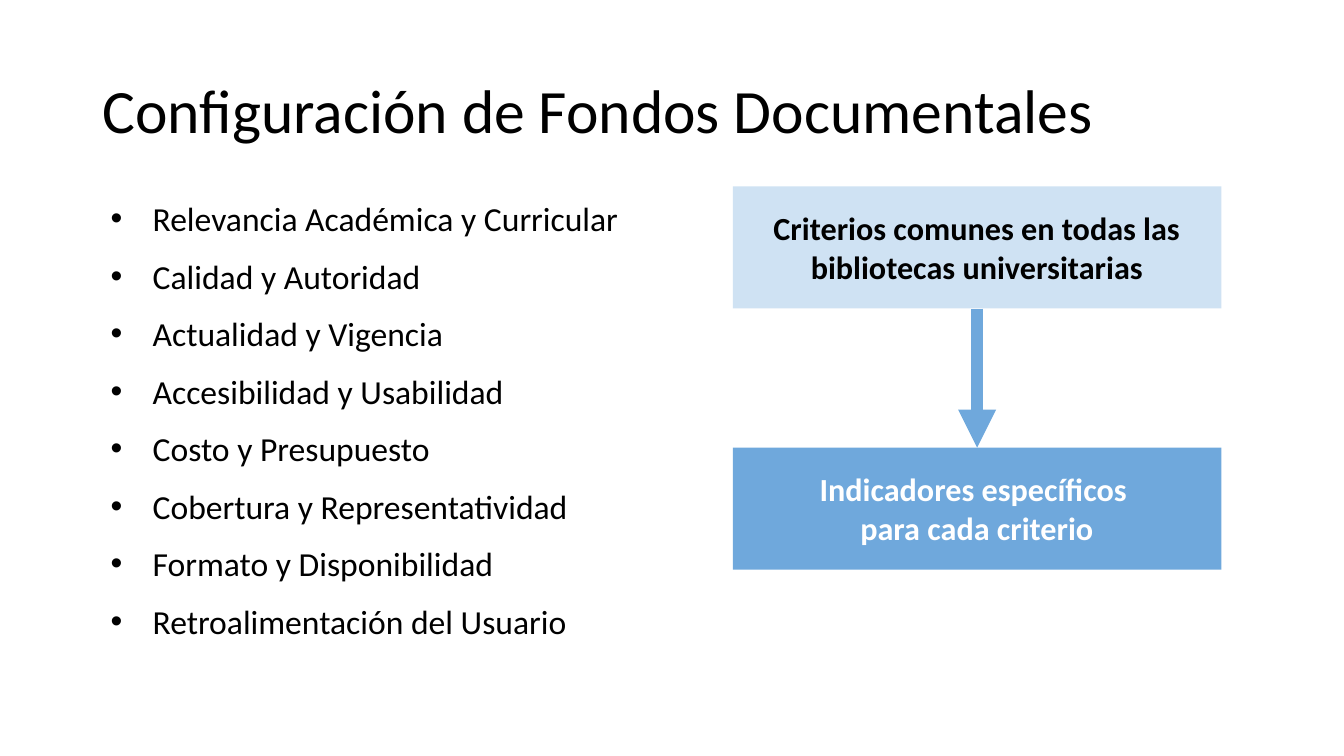
from lxml import etree
from pptx import Presentation
from pptx.dml.color import RGBColor
from pptx.enum.shapes import MSO_CONNECTOR, MSO_SHAPE
from pptx.enum.text import MSO_ANCHOR, MSO_AUTO_SIZE, PP_ALIGN
from pptx.oxml.ns import qn
from pptx.util import Pt

RECTANGLE = MSO_SHAPE.RECTANGLE
STRAIGHT = MSO_CONNECTOR.STRAIGHT
TOP, MIDDLE = MSO_ANCHOR.TOP, MSO_ANCHOR.MIDDLE
CENTER = PP_ALIGN.CENTER
GROW = MSO_AUTO_SIZE.SHAPE_TO_FIT_TEXT
BOTTOM_SIDE, TOP_SIDE = 2, 0

COLORS = {"black": "000000", "white": "FFFFFF", "pale": "CFE2F3", "blue": "6FA8DC"}
CRITERIA = [
    "Relevancia Académica y Curricular",
    "Calidad y Autoridad",
    "Actualidad y Vigencia",
    "Accesibilidad y Usabilidad",
    "Costo y Presupuesto",
    "Cobertura y Representatividad",
    "Formato y Disponibilidad",
    "Retroalimentación del Usuario",
]


class SlideBuilder:
    font_name = "Calibri"

    def __init__(self, page):
        self.page = page

    def color(self, name):
        return RGBColor.from_string(COLORS[name])

    def format_runs(self, para, size, color, bold=False):
        for span in para.runs:
            span.font.name = self.font_name
            span.font.size = Pt(size)
            span.font.bold = bold
            span.font.color.rgb = self.color(color)

    def text_box(self, left, top, width, height, anchor):
        box = self.page.shapes.add_textbox(Pt(left), Pt(top), Pt(width), Pt(height))
        frame = box.text_frame
        frame.word_wrap = True
        frame.vertical_anchor = anchor
        return frame

    def title(self, text, left, top, width, height):
        frame = self.text_box(left, top, width, height, MIDDLE)
        frame.text = text
        para = frame.paragraphs[0]
        para.line_spacing = 0.9
        self.format_runs(para, 44, "black")

    def bullets(self, items, left, top, width, height):
        frame = self.text_box(left, top, width, height, TOP)
        frame.text = "\n".join(items)
        for index, para in enumerate(frame.paragraphs):
            para.line_spacing = 0.8
            para.space_before = Pt(18 if index else 0)
            properties = para._p.get_or_add_pPr()
            properties.set("marL", str(Pt(36)))
            properties.set("indent", str(Pt(-30)))
            bullet_color = etree.SubElement(properties, qn("a:buClr"))
            etree.SubElement(bullet_color, qn("a:srgbClr"), val=COLORS["black"])
            etree.SubElement(properties, qn("a:buFont"), typeface="Arial")
            etree.SubElement(properties, qn("a:buChar"), char="•")
            self.format_runs(para, 24, "black")

    def panel(self, text, left, top, width, height, fill, color):
        box = self.page.shapes.add_shape(RECTANGLE, Pt(left), Pt(top), Pt(width), Pt(height))
        box.shadow.inherit = False
        box.fill.solid()
        box.fill.fore_color.rgb = self.color(fill)
        box.line.fill.background()
        frame = box.text_frame
        frame.word_wrap = True
        frame.auto_size = GROW
        frame.vertical_anchor = TOP
        frame.margin_left = frame.margin_right = Pt(15.84)
        frame.margin_top = frame.margin_bottom = Pt(15.84)
        frame.text = text
        para = frame.paragraphs[0]
        para.alignment = CENTER
        self.format_runs(para, 23, color, bold=True)
        return box

    def arrow(self, upper, lower, color, width):
        link = self.page.shapes.add_connector(STRAIGHT, 0, 0, 0, 0)
        link.begin_connect(upper, BOTTOM_SIDE)
        link.end_connect(lower, TOP_SIDE)
        link.line.color.rgb = self.color(color)
        link.line.width = Pt(width)
        etree.SubElement(link.line._get_or_add_ln(), qn("a:tailEnd"), type="triangle")
        etree.SubElement(link._element.spPr, qn("a:effectLst"))


def main():
    deck = Presentation()
    deck.slide_width, deck.slide_height = Pt(960), Pt(540)
    builder = SlideBuilder(deck.slides.add_slide(deck.slide_layouts[6]))
    builder.title("Configuración de Fondos Documentales", 66, 28.75, 828, 104.4)
    builder.bullets(CRITERIA, 66, 143.75, 828, 342.6)
    common = builder.panel(
        "Criterios comunes en todas las bibliotecas universitarias",
        523.5, 133.2, 349, 87.2, "pale", "black",
    )
    specific = builder.panel(
        "Indicadores específicos \vpara cada criterio",
        523.5, 319.7, 349, 87.2, "blue", "white",
    )
    builder.arrow(common, specific, "blue", 9)
    deck.save("out.pptx")


if __name__ == "__main__":
    main()
